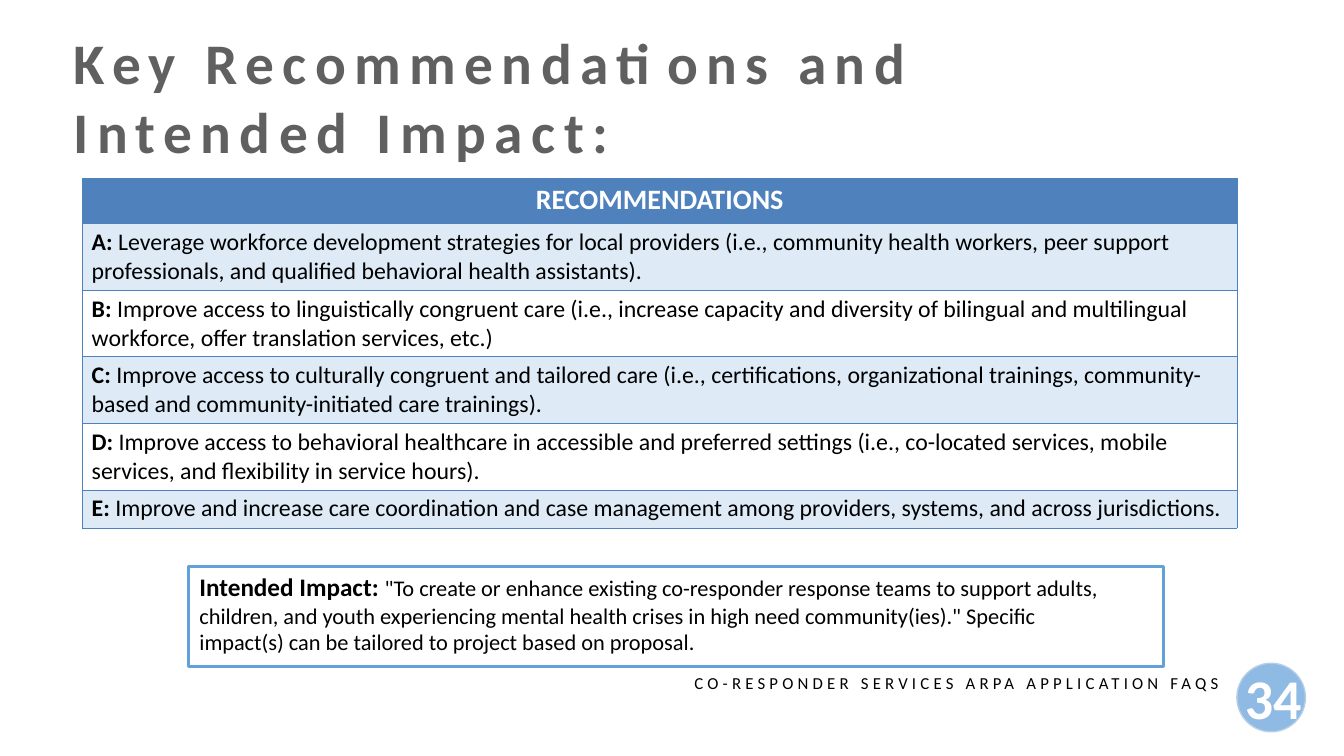
"""Build the slide of key recommendations and intended impact."""
from lxml import etree
from pptx import Presentation
from pptx import util as u
from pptx.dml.color import RGBColor
from pptx.enum import shapes, text
from pptx.oxml.ns import qn

HUES = {"head": "4F81BD", "band": "DEEBF7", "white": "FFFFFF", "black": "000000",
        "title": "606060", "disc": "8FBAE3", "rim": "B6CEE6", "frame": "63A2D8"}
TINT = {name: RGBColor.from_string(code) for name, code in HUES.items()}

deck = Presentation()
deck.slide_width, deck.slide_height = u.Inches(13.33), u.Inches(7.5)
slide = deck.slides.add_slide(deck.slide_layouts[6])
COL, ROW = deck.slide_width / 100, deck.slide_height / 100


def area(left, top, wide, high):
    return [round(n) for n in (left * COL, top * ROW, wide * COL, high * ROW)]


def write(frame, parts, hue, align=text.PP_ALIGN.LEFT, gap=0):
    frame.word_wrap = True
    para = frame.paragraphs[0]
    para.alignment = align
    for words, size, bold in parts:
        run = para.add_run()
        run.text = words
        font = run.font
        font.name, font.size, font.bold = "Calibri", u.Pt(size), bold
        font.color.rgb = TINT[hue]
        if gap:
            run._r.get_or_add_rPr().set("spc", str(gap * 100))


MID = text.PP_ALIGN.CENTER
disc = slide.shapes.add_shape(shapes.MSO_SHAPE.OVAL, *area(92.03, 87.73, 5.1, 9.07))
disc.fill.solid()
disc.fill.fore_color.rgb = TINT["disc"]
frame = slide.shapes.add_shape(shapes.MSO_SHAPE.RECTANGLE, *area(14.03, 74.93, 72.53, 13.2))
frame.fill.background()
for shape, hue, width in ((disc, "rim", 1), (frame, "frame", 2.25)):
    shape.shadow.inherit = False
    shape.line.color.rgb = TINT[hue]
    shape.line.width = u.Pt(width)

impact = [
    ("Intended Impact: ", 18, True),
    ('"To create or enhance existing co-responder response teams to support adults, '
     'children, and youth experiencing mental health crises in high need community(ies)." '
     'Specific impact(s) can be tailored to project based on proposal.', 16, False)]
boxes = [
    ((91.43, 87.07, 6.6, 10.27), [("34", 40, True)], "white", MID, 0),
    ((4.73, 2.93, 81.23, 19.73), [("Key Recommendations and Intended Impact:", 41, True)],
     "title", text.PP_ALIGN.LEFT, 6),
    ((50.93, 88.27, 44.1, 4), [("CO-RESPONDER SERVICES ARPA APPLICATION FAQS", 12, False)],
     "black", text.PP_ALIGN.JUSTIFY, 3),
    ((14.1, 74.93, 70.2, 12.53), impact, "black", text.PP_ALIGN.LEFT, 0)]
for place, parts, hue, align, gap in boxes:
    write(slide.shapes.add_textbox(*area(*place)).text_frame, parts, hue, align, gap)

advice = [
    "Leverage workforce development strategies for local providers (i.e., community health "
    "workers, peer support professionals, and qualified behavioral health assistants).",
    "Improve access to linguistically congruent care (i.e., increase capacity and diversity "
    "of bilingual and multilingual workforce, offer translation services, etc.)",
    "Improve access to culturally congruent and tailored care (i.e., certifications, "
    "organizational trainings, community-based and community-initiated care trainings).",
    "Improve access to behavioral healthcare in accessible and preferred settings (i.e., "
    "co-located services, mobile services, and flexibility in service hours).",
    "Improve and increase care coordination and case management among providers, systems, "
    "and across jurisdictions."]
highs = [6] + [8.8] * 4 + [5.07]
table = slide.shapes.add_table(len(highs), 1, *area(6.15, 23.6, 85.88, sum(highs))).table
for row, high in enumerate(highs):
    table.rows[row].height = round(high * ROW)
    cell = table.cell(row, 0)
    cell.margin_left = cell.margin_right = u.Inches(0.09)
    cell.margin_top = cell.margin_bottom = u.Inches(0.04)
    if row:
        mark = "ABCDE"[row - 1] + ": "
        write(cell.text_frame, [(mark, 17, True), (advice[row - 1], 17, False)], "black")
    else:
        write(cell.text_frame, [("RECOMMENDATIONS", 20, True)], "white", MID)
    props = cell._tc.get_or_add_tcPr()
    for side in ("a:lnL", "a:lnR", "a:lnT", "a:lnB"):
        edge = etree.SubElement(props, qn(side), w=str(u.Pt(0.5)))
        paint = etree.SubElement(edge, qn("a:solidFill"))
        etree.SubElement(paint, qn("a:srgbClr"), val=HUES["head"])
    cell.fill.solid()
    cell.fill.fore_color.rgb = TINT["head" if not row else "band" if row % 2 else "white"]

deck.save("out.pptx")
